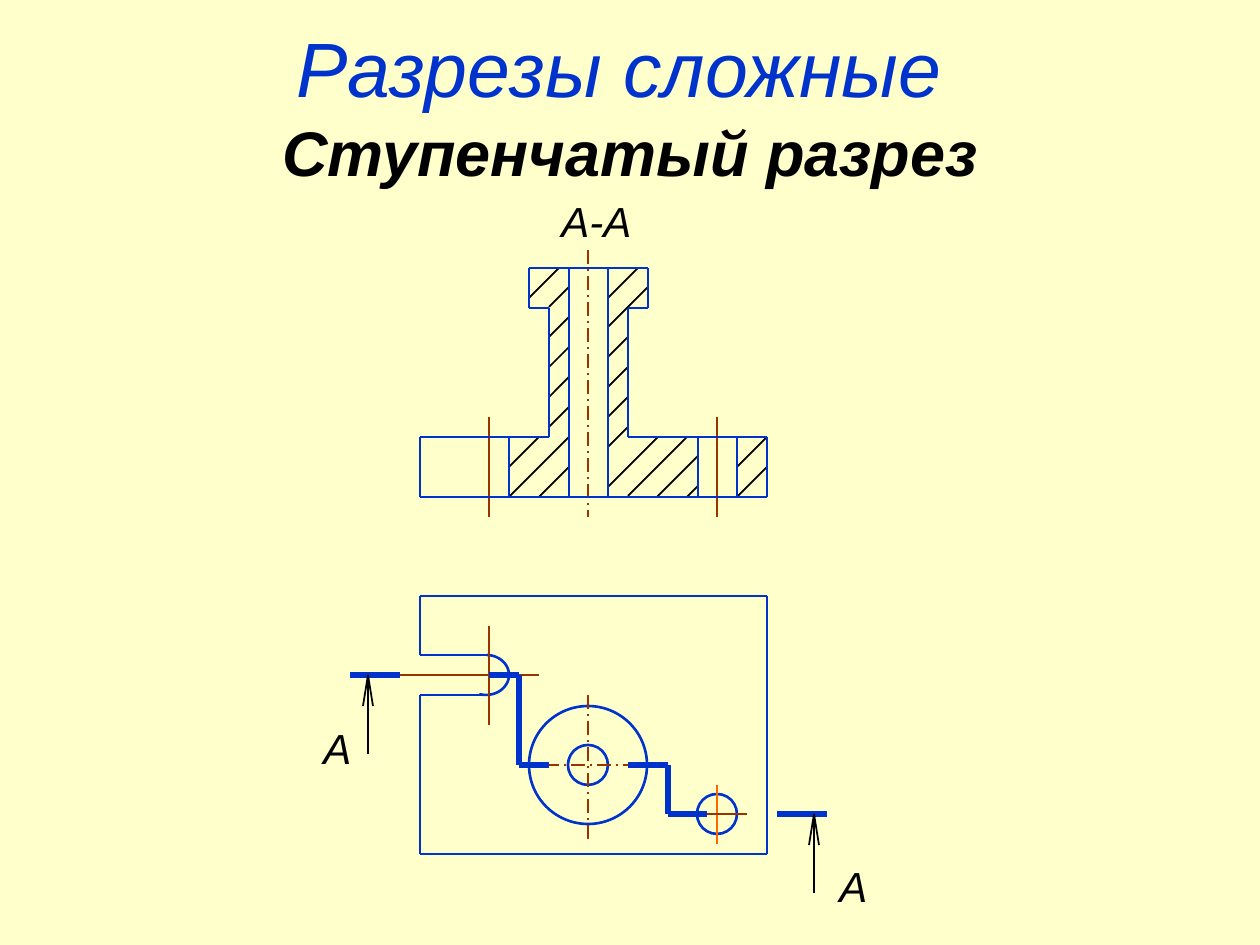
from math import cos, radians, sin

from lxml import etree
from pptx import Presentation
from pptx.dml.color import RGBColor
from pptx.enum.dml import MSO_LINE
from pptx.enum.shapes import MSO_CONNECTOR, MSO_SHAPE
from pptx.enum.text import MSO_ANCHOR, MSO_AUTO_SIZE, PP_ALIGN
from pptx.oxml.ns import qn
from pptx.util import Emu, Pt

STRAIGHT = MSO_CONNECTOR.STRAIGHT
OVAL = MSO_SHAPE.OVAL
DASH_DOT = MSO_LINE.LONG_DASH_DOT
MIDDLE = MSO_ANCHOR.MIDDLE
NO_AUTOFIT, GROW = MSO_AUTO_SIZE.NONE, MSO_AUTO_SIZE.SHAPE_TO_FIT_TEXT
CENTER = PP_ALIGN.CENTER

FONT = "Arial"
COLORS = {"paper": "FFFFCC", "outline": "0033CC", "axis": "993300",
          "hole_axis": "FF6600", "ink": "000000"}
OUTLINE = {"color": "outline", "width": 1.5}
CUT = {"color": "outline", "width": 3.5}
AXIS = {"color": "axis", "width": 1}
CENTER_AXIS = {**AXIS, "dash": DASH_DOT}
INK = {"color": "ink", "width": 1}


def px(n):
    return Emu(round(n * 914400 / 126))


def rgb(name):
    return RGBColor.from_string(COLORS[name])


def style_line(line, color, width, dash=None):
    line.color.rgb = rgb(color)
    line.width = Pt(width)
    if dash is not None:
        line.dash_style = dash


def draw_lines(shapes, origin, points, **style):
    """Join successive points, given relative to origin, by connectors."""
    ox, oy = origin
    for (x1, y1), (x2, y2) in zip(points, points[1:]):
        c = shapes.add_connector(STRAIGHT, px(ox + x1), px(oy + y1),
                                 px(ox + x2), px(oy + y2))
        style_line(c.line, **style)
        etree.SubElement(c._element.spPr, qn("a:effectLst"))


def draw_circle(shapes, origin, cx, cy, radius):
    sp = shapes.add_shape(OVAL, px(origin[0] + cx - radius), px(origin[1] + cy - radius),
                          px(2 * radius), px(2 * radius))
    sp.shadow.inherit = False
    sp.fill.background()
    style_line(sp.line, **OUTLINE)


def draw_slot_end(shapes, origin, cx, cy, rx, ry):
    points = [(px(origin[0] + cx + rx * cos(radians(a))),
               px(origin[1] + cy + ry * sin(radians(a)))) for a in range(107, -91, -5)]
    builder = shapes.build_freeform(*points[0])
    builder.add_line_segments(points[1:], close=False)
    sp = builder.convert_to_shape()
    sp.shadow.inherit = False
    sp.fill.background()
    style_line(sp.line, **OUTLINE)


def draw_hatch(shapes, origin, first, last, count, strips):
    """Draw evenly spaced lines x + y = c, clipped to strips (left, right, top, bottom)."""
    for i in range(count):
        c = first + (last - first) * i // (count - 1)
        runs = []
        for left, right, top, bottom in strips:
            lo, hi = max(left, c - bottom), min(right, c - top)
            if hi - lo < 3:
                continue
            if runs and runs[-1][1] == lo:
                runs[-1][1] = hi
            else:
                runs.append([lo, hi])
        for lo, hi in runs:
            draw_lines(shapes, origin, [(hi, c - hi), (lo, c - lo)], **INK)


def draw_arrow(shapes, origin, x, y):
    group = shapes.add_group_shape().shapes
    draw_lines(group, origin, [(x, y), (x, y + 79)], **INK)
    draw_lines(group, origin, [(x - 5, y + 31), (x, y), (x + 5, y + 31)], **INK)


def add_text(p, text, size, color="ink", bold=False, italic=True):
    r = p.add_run()
    r.text = text
    r.font.name = FONT
    r.font.size = Pt(size)
    r.font.bold = bold
    r.font.italic = italic
    r.font.color.rgb = rgb(color)


def add_label(shapes, origin, x, y, width, text):
    box = shapes.add_textbox(px(origin[0] + x), px(origin[1] + y), px(width), px(64))
    tf = box.text_frame
    tf.word_wrap = False
    tf.auto_size = GROW
    add_text(tf.paragraphs[0], text, 24)


def fill_title(title, x, y, width, height):
    title.left, title.top, title.width, title.height = map(px, (x, y, width, height))
    tf = title.text_frame
    tf.auto_size = NO_AUTOFIT
    tf.vertical_anchor = MIDDLE
    p = tf.paragraphs[0]
    p.alignment = CENTER
    add_text(p, "Разрезы сложные ", 44, "outline")
    p.add_line_break()
    add_text(p, "Ступенчатый разрез", 36, bold=True)


def draw_section_view(shapes, origin):
    left_strips = [(89, 129, 169, 229), (109, 129, 0, 40), (129, 149, 0, 229)]
    right_strips = [(188, 208, 0, 229), (208, 228, 0, 40), (208, 278, 169, 229)]
    for first, last, count, strips in [(139, 348, 8, left_strips),
                                       (218, 367, 6, right_strips),
                                       (407, 496, 4, right_strips),
                                       (516, 546, 2, [(317, 347, 169, 229)])]:
        draw_hatch(shapes, origin, first, last, count, strips)
    draw_lines(shapes, origin, [(168, -18), (168, 249)], **CENTER_AXIS)
    for x in (69, 297):
        draw_lines(shapes, origin, [(x, 149), (x, 249)], **AXIS)
    draw_lines(shapes, origin, [(0, 229), (347, 229), (347, 169), (208, 169), (208, 40),
                                (228, 40), (228, 0), (109, 0), (109, 40), (129, 40),
                                (129, 169), (0, 169), (0, 229)], **OUTLINE)
    for x, top in [(89, 169), (278, 169), (317, 169), (149, 0), (188, 0)]:
        draw_lines(shapes, origin, [(x, top), (x, 229)], **OUTLINE)
    add_label(shapes, origin, 129, -79, 97, "А-А")


def draw_plan_view(shapes, origin):
    draw_lines(shapes, origin, [(69, 59), (0, 59), (0, 0), (347, 0), (347, 258),
                                (0, 258), (0, 99), (69, 99)], **OUTLINE)
    draw_slot_end(shapes, origin, 66, 79, 23, 20)
    for cx, cy, radius in [(168, 169, 59), (168, 169, 20), (297, 218, 20)]:
        draw_circle(shapes, origin, cx, cy, radius)
    for start, end, style in [((168, 99), (168, 248), CENTER_AXIS),
                              ((99, 169), (238, 169), CENTER_AXIS),
                              ((69, 30), (69, 129), AXIS),
                              ((119, 79), (-50, 79), AXIS),
                              ((297, 189), (297, 248), {**AXIS, "color": "hole_axis"}),
                              ((268, 218), (327, 218), AXIS)]:
        draw_lines(shapes, origin, [start, end], **style)
    for points in [[(-20, 79), (-70, 79)],
                   [(69, 79), (99, 79), (99, 169), (129, 169)],
                   [(208, 169), (248, 169), (248, 218), (287, 218)],
                   [(407, 218), (357, 218)]]:
        draw_lines(shapes, origin, points, **CUT)
    for arrow, label in [((-52, 79), (-109, 120)), ((394, 218), (407, 258))]:
        draw_arrow(shapes, origin, *arrow)
        add_label(shapes, origin, *label, 52, "А")


def main():
    prs = Presentation()
    prs.slide_width, prs.slide_height = px(1260), px(945)
    s = prs.slides.add_slide(prs.slide_layouts[5])
    s.background.fill.solid()
    s.background.fill.fore_color.rgb = rgb("paper")
    fill_title(s.shapes.title, 63, 26, 1134, 158)
    draw_section_view(s.shapes, (420, 268))
    draw_plan_view(s.shapes, (420, 596))
    prs.save("out.pptx")


if __name__ == "__main__":
    main()
